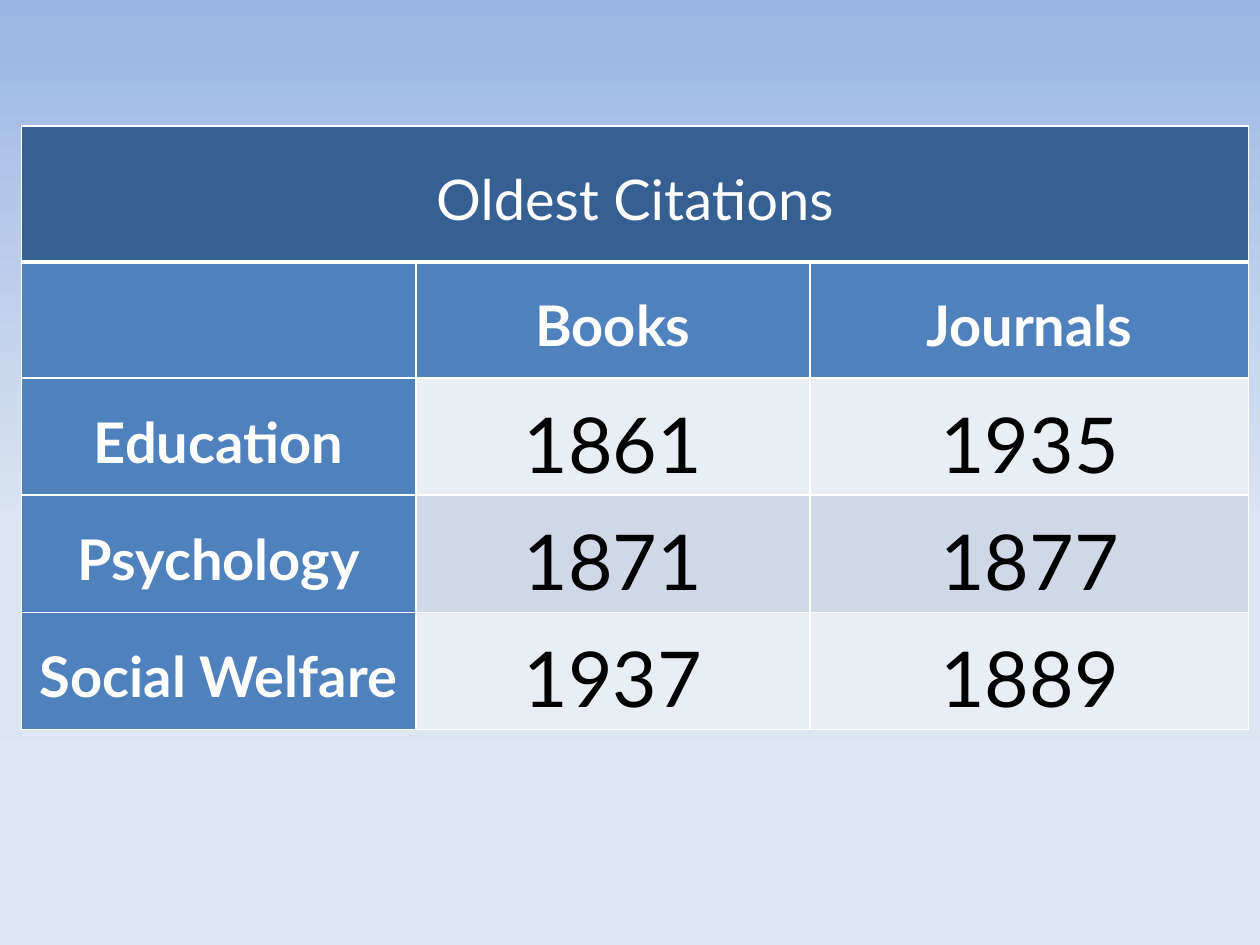
from copy import deepcopy

from lxml import etree
from pptx import Presentation
from pptx.dml.color import RGBColor
from pptx.enum.text import MSO_ANCHOR, PP_ALIGN
from pptx.oxml.ns import qn
from pptx.util import Inches, Pt

CENTER = PP_ALIGN.CENTER
MIDDLE = MSO_ANCHOR.MIDDLE
WHITE, BLACK = "FFFFFF", "000000"
TITLE_FILL, HEADER_FILL = "376092", "4F81BD"
BAND_FILLS = ["E9EDF4", "D0D8E8"]
BACKGROUND = [(0, "9AB5E4"), (0.57, "DCE6F2"), (1, "E1E8F5")]
COLUMN_WIDTHS = [3.13, 3.13, 3.48]
ROW_HEIGHTS = [1.08, 0.92, 0.93, 0.93, 0.93]
CITATIONS = [
    ["Oldest Citations", "", ""],
    ["", "Books", "Journals"],
    ["Education", "1861", "1935"],
    ["Psychology", "1871", "1877"],
    ["Social Welfare", "1937", "1889"],
]


def color(value):
    return RGBColor.from_string(value)


class SlideBuilder:
    """Holds the style and the current slide."""

    def __init__(self, page, font="Lato"):
        self.page = page
        self.font = font

    def background(self, stops):
        fill = self.page.background.fill
        fill.gradient()
        fill.gradient_angle = 270
        stop_list = next(self.page.element.iter(qn("a:gsLst")))
        stop_list.append(deepcopy(stop_list[-1]))
        for stop, (position, value) in zip(fill.gradient_stops, stops):
            stop.position = position
            stop.color.rgb = color(value)

    def borders(self, cell, top, bottom):
        properties = cell._tc.get_or_add_tcPr()
        sides = [("L", 1), ("R", 1), ("T", top), ("B", bottom)]
        for index, (side, width) in enumerate(sides):
            line = etree.Element(qn(f"a:ln{side}"), w=str(Pt(width)))
            solid = etree.SubElement(line, qn("a:solidFill"))
            etree.SubElement(solid, qn("a:srgbClr"), val=WHITE)
            properties.insert(index, line)

    def cell(self, cell, text, fill, size, ink, bold):
        cell.fill.solid()
        cell.fill.fore_color.rgb = color(fill)
        cell.vertical_anchor = MIDDLE
        cell.margin_left = cell.margin_right = Inches(0.07)
        cell.margin_top = cell.margin_bottom = 0
        if not text:
            return
        para = cell.text_frame.paragraphs[0]
        para.alignment = CENTER
        para.line_spacing = 1.15
        span = para.add_run()
        span.text = text
        span.font.name = self.font
        span.font.size = Pt(size)
        span.font.bold = bold
        span.font.color.rgb = color(ink)

    def table(self, left, top, widths, heights, rows):
        frame = self.page.shapes.add_table(
            len(rows), len(widths), Inches(left), Inches(top),
            Inches(sum(widths)), Inches(sum(heights)))
        table = frame.table
        for column, width in zip(table.columns, widths):
            column.width = Inches(width)
        for row, height in zip(table.rows, heights):
            row.height = Inches(height)
        table.cell(0, 0).merge(table.cell(0, len(widths) - 1))
        for r, texts in enumerate(rows):
            for c, text in enumerate(texts):
                if r == 0:
                    style = (TITLE_FILL, 32, WHITE, False)
                elif r == 1 or c == 0:
                    style = (HEADER_FILL, 32, WHITE, True)
                else:
                    style = (BAND_FILLS[r % 2], 44, BLACK, False)
                cell = table.cell(r, c)
                self.cell(cell, text, *style)
                self.borders(cell, 3 if r == 1 else 1, 3 if r == 0 else 1)


def main():
    deck = Presentation()
    deck.slide_width, deck.slide_height = Inches(10), Inches(7.5)
    builder = SlideBuilder(deck.slides.add_slide(deck.slide_layouts[6]))
    builder.background(BACKGROUND)
    builder.table(0.17, 1, COLUMN_WIDTHS, ROW_HEIGHTS, CITATIONS)
    deck.save("out.pptx")


if __name__ == "__main__":
    main()
